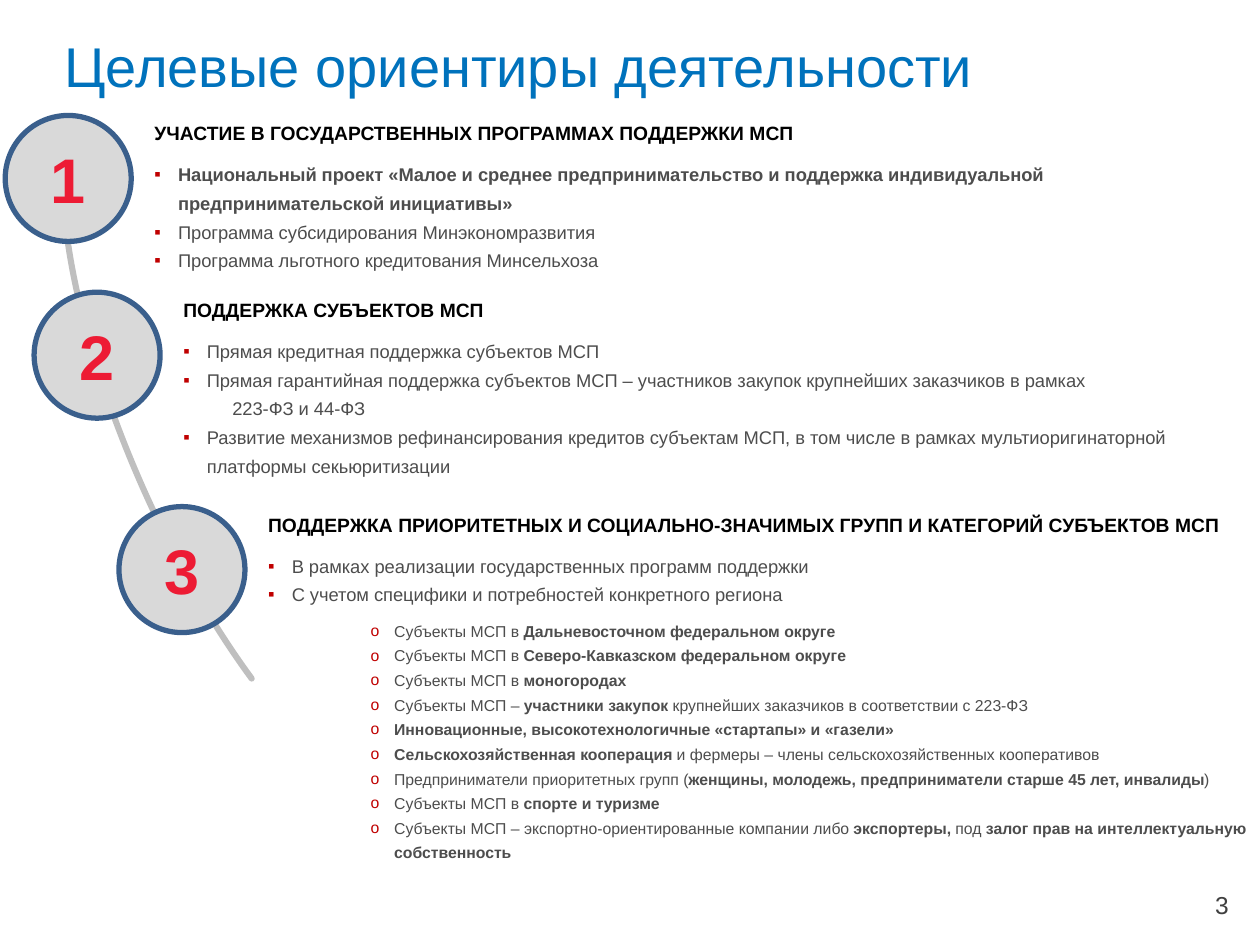
from dataclasses import dataclass

from lxml import etree
from pptx import Presentation
from pptx.dml.color import RGBColor
from pptx.enum import shapes, text
from pptx.oxml.ns import qn
from pptx.util import Pt


@dataclass(frozen=True)
class Theme:
    font: str = "Arial"
    title: str = "0072BC"
    heading: str = "000000"
    body: str = "4D4D4D"
    bullet: str = "C00000"
    page: str = "404040"
    arc: str = "BFBFBF"
    badge_fill: str = "D9D9D9"
    badge_line: str = "3A5F8C"
    badge_text: str = "ED1B34"
    title_size: float = 32
    badge_size: float = 36
    page_size: float = 14
    heading_size: float = 11
    body_size: float = 10.5
    detail_size: float = 9


T = Theme()
BADGE = 72
TEXT_OFFSET = 76.75
HANG = 13.5
LINE_SPACING = 1.3

# Each item is (style, text); ** marks the start and end of bold.
# Each section is (left, top, width, height, heading, items).
SECTIONS = [
    (3, 66, 615.5, 94.5, "УЧАСТИЕ В ГОСУДАРСТВЕННЫХ ПРОГРАММАХ ПОДДЕРЖКИ МСП", [
        ("item", "**Национальный проект «Малое и среднее предпринимательство и поддержка "
                 "индивидуальной предпринимательской инициативы»**"),
        ("item", "Программа субсидирования Минэкономразвития"),
        ("item", "Программа льготного кредитования Минсельхоза"),
    ]),
    (19.5, 167, 600, 111, "ПОДДЕРЖКА СУБЪЕКТОВ МСП", [
        ("item", "Прямая кредитная поддержка субъектов МСП"),
        ("item", "Прямая гарантийная поддержка субъектов МСП – участников закупок "
                 "крупнейших заказчиков в рамках"),
        ("continuation", "223-ФЗ и 44-ФЗ"),
        ("item", "Развитие механизмов рефинансирования кредитов субъектам МСП, в том числе "
                 "в рамках мультиоригинаторной платформы секьюритизации"),
    ]),
    (68, 289.5, 578, 223, "ПОДДЕРЖКА ПРИОРИТЕТНЫХ И СОЦИАЛЬНО-ЗНАЧИМЫХ ГРУПП И КАТЕГОРИЙ "
                          "СУБЪЕКТОВ МСП", [
        ("item", "В рамках реализации государственных программ поддержки"),
        ("item", "С учетом специфики и потребностей конкретного региона"),
        ("detail", "Субъекты МСП в **Дальневосточном федеральном округе**"),
        ("detail", "Субъекты МСП в **Северо-Кавказском федеральном округе**"),
        ("detail", "Субъекты МСП в **моногородах**"),
        ("detail", "Субъекты МСП – **участники закупок **крупнейших заказчиков "
                   "в соответствии с 223-ФЗ"),
        ("detail", "**Инновационные, высокотехнологичные «стартапы» и «газели»**"),
        ("detail", "**Сельскохозяйственная кооперация **и фермеры – члены "
                   "сельскохозяйственных кооперативов"),
        ("detail", "Предприниматели приоритетных групп (**женщины, молодежь, "
                   "предприниматели старше 45 лет, инвалиды**)"),
        ("detail", "Субъекты МСП в **спорте и туризме**"),
        ("detail", "Субъекты МСП – экспортно-ориентированные компании либо **экспортеры, **"
                   "под **залог прав на интеллектуальную собственность**"),
    ]),
]

# style: (bullet, left margin, size, gap above the first of its group)
STYLES = {
    "item": ("▪", HANG, T.body_size, 7),
    "continuation": (None, 28, T.body_size, 0),
    "detail": ("o", 72, T.detail_size, 6),
}


def rgb(value):
    return RGBColor.from_string(value)


def add_run(p, content, size, color, bold=False):
    r = p.add_run()
    r.text = content
    r.font.name = T.font
    r.font.size = Pt(size)
    r.font.bold = bold
    r.font.color.rgb = rgb(color)


def add_text_box(s, box, insets, anchor=text.MSO_ANCHOR.TOP):
    tf = s.shapes.add_textbox(*map(Pt, box)).text_frame
    tf.word_wrap = True
    tf.vertical_anchor = anchor
    tf.margin_left, tf.margin_top, tf.margin_right, tf.margin_bottom = map(Pt, insets)
    return tf


def set_bullet(p, char, margin):
    """Set the left margin and, when char is given, a hanging bullet."""
    pPr = p._p.get_or_add_pPr()
    pPr.set("marL", str(Pt(margin)))
    pPr.set("indent", str(Pt(-HANG) if char else 0))
    if not char:
        etree.SubElement(pPr, qn("a:buNone"))
        return
    color = etree.SubElement(pPr, qn("a:buClr"))
    etree.SubElement(color, qn("a:srgbClr"), val=T.bullet)
    etree.SubElement(pPr, qn("a:buFont"), typeface=T.font)
    etree.SubElement(pPr, qn("a:buChar"), char=char)


def add_title(s, box):
    tf = add_text_box(s, box, (0, 3.5, 0, 0))
    add_run(tf.paragraphs[0], "Целевые ориентиры деятельности", T.title_size, T.title)


def add_page_number(s, box):
    tf = add_text_box(s, box, (7.2, 3.6, 7.2, 3.6), text.MSO_ANCHOR.MIDDLE)
    p = tf.paragraphs[0]
    p.alignment = text.PP_ALIGN.RIGHT
    add_run(p, "3", T.page_size, T.page)


def add_arc(s, box):
    """Draw the curve that links the badges."""
    sp = s.shapes.add_shape(shapes.MSO_SHAPE.BLOCK_ARC, *map(Pt, box))
    sp.shadow.inherit = False
    sp.rotation = 156
    for i, value in enumerate((178.95, 43.95, 0)):
        sp.adjustments[i] = value
    sp.fill.background()
    sp.line.color.rgb = rgb(T.arc)
    sp.line.width = Pt(3.5)


def add_badge(s, left, top, number):
    sp = s.shapes.add_shape(shapes.MSO_SHAPE.OVAL, Pt(left), Pt(top), Pt(BADGE), Pt(BADGE))
    sp.shadow.inherit = False
    sp.fill.solid()
    sp.fill.fore_color.rgb = rgb(T.badge_fill)
    sp.line.color.rgb = rgb(T.badge_line)
    sp.line.width = Pt(3)
    tf = sp.text_frame
    tf.vertical_anchor = text.MSO_ANCHOR.MIDDLE
    p = tf.paragraphs[0]
    p.alignment = text.PP_ALIGN.CENTER
    add_run(p, str(number), T.badge_size, T.badge_text, True)


def add_section(s, box, number, heading, items):
    """Place a numbered badge with its heading and list to the right."""
    left, top, width, height = box
    add_badge(s, left, top, number)
    tf = add_text_box(s, (left + TEXT_OFFSET, top, width, height), (8.5, 3.6, 7.2, 3.6))
    tf.auto_size = text.MSO_AUTO_SIZE.SHAPE_TO_FIT_TEXT
    add_run(tf.paragraphs[0], heading, T.heading_size, T.heading, True)
    previous = None
    for style, content in items:
        char, margin, size, gap = STYLES[style]
        p = tf.add_paragraph()
        set_bullet(p, char, margin)
        p.line_spacing = LINE_SPACING
        p.space_before = Pt(0 if previous in (style, "continuation") else gap)
        for i, part in enumerate(content.split("**")):
            if part:
                add_run(p, part, size, T.body, i % 2 == 1)
        previous = style


def main():
    prs = Presentation()
    prs.slide_width, prs.slide_height = Pt(720), Pt(540)
    s = prs.slides.add_slide(prs.slide_layouts[6])
    add_arc(s, (75, 16, 158.5, 462))
    add_page_number(s, (541.5, 502.5, 167.75, 29))
    for number, (*box, heading, items) in enumerate(SECTIONS, 1):
        add_section(s, box, number, heading, items)
    add_title(s, (36.75, 14.5, 601, 68.5))
    prs.save("out.pptx")


if __name__ == "__main__":
    main()
